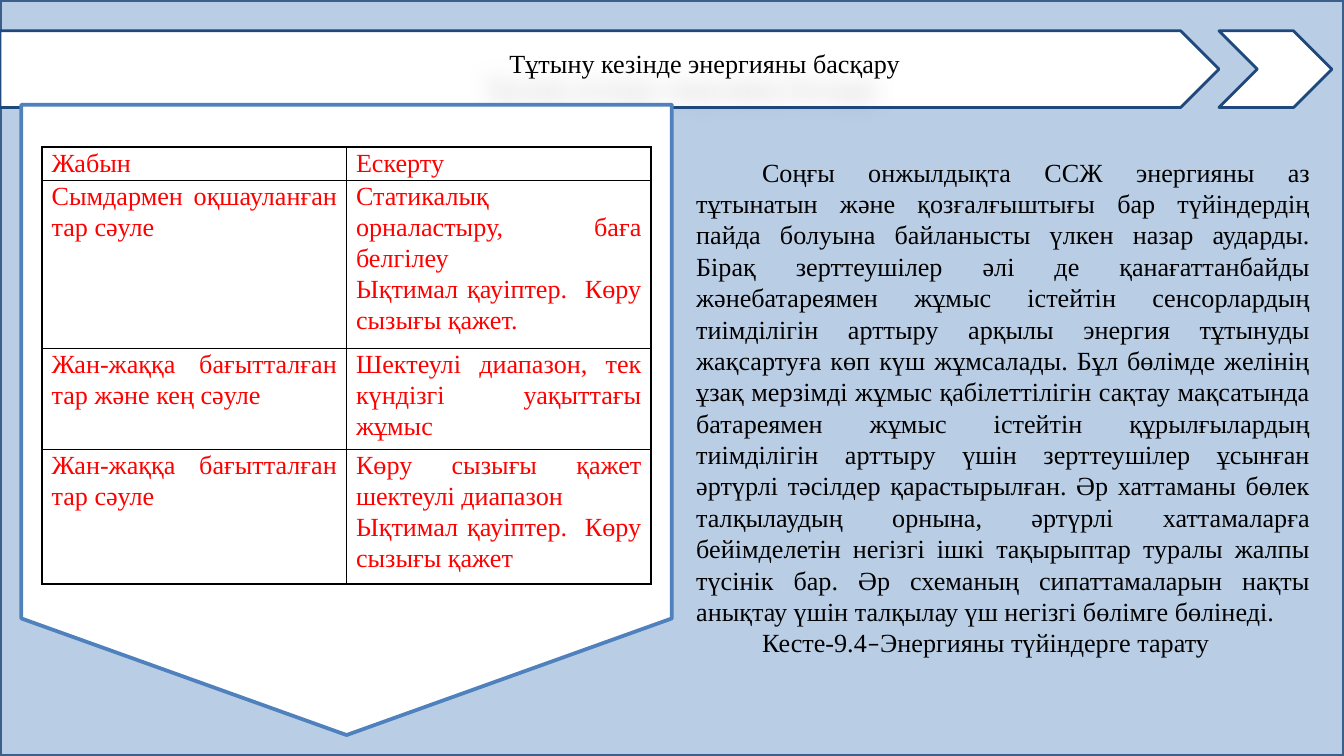
from dataclasses import dataclass
from typing import Optional

from lxml import etree
from pptx import Presentation
from pptx import util as u
from pptx.dml.color import RGBColor
from pptx.enum import shapes, text
from pptx.oxml import parse_xml
from pptx.oxml.ns import nsdecls, qn

# Grid of the slide: 100 columns by 56.25 rows
COLUMNS, ROWS = 100, 56.25
presentation = Presentation()
presentation.slide_width = u.Inches(10)
presentation.slide_height = u.Emu(presentation.slide_width * 9 // 16)
COLUMN = presentation.slide_width / COLUMNS
ROW = presentation.slide_height / ROWS
FONT = "Times New Roman"
BLACK, RED, WHITE = "000000", "FF0000", "FFFFFF"
JUSTIFY = text.PP_ALIGN.JUSTIFY


@dataclass
class Box:
    left: float
    top: float
    width: float
    height: float

    def place(self) -> dict:
        return {
            "left": u.Emu(round(self.left * COLUMN)),
            "top": u.Emu(round(self.top * ROW)),
            "width": u.Emu(round(self.width * COLUMN)),
            "height": u.Emu(round(self.height * ROW)),
        }


@dataclass
class Panel:
    kind: shapes.MSO_SHAPE
    box: Box
    fill: str
    line: str
    line_width: float
    rotation: float = 0
    adjustment: Optional[float] = None


def colour(value: str) -> RGBColor:
    return RGBColor.from_string(value)


def apply(target, values: dict) -> None:
    for name, value in values.items():
        setattr(target, name, value)


def draw_panel(slide, panel: Panel) -> None:
    shape = slide.shapes.add_shape(panel.kind, **panel.box.place())
    shape.shadow.inherit = False
    shape.rotation = panel.rotation
    if panel.adjustment is not None:
        shape.adjustments[0] = panel.adjustment
    shape.fill.solid()
    shape.fill.fore_color.rgb = colour(panel.fill)
    shape.line.color.rgb = colour(panel.line)
    shape.line.width = u.Pt(panel.line_width)


def write(paragraph, runs: list, ink: str, settings: dict) -> None:
    """Fill a paragraph with (words, font name) runs."""
    apply(paragraph, settings)
    for words, font_name in runs:
        run = paragraph.add_run()
        run.text = words
        apply(run.font, {"name": font_name, "size": u.Pt(14), "bold": False})
        run.font.color.rgb = colour(ink)


def indent_first_line(paragraph) -> None:
    properties = paragraph._p.get_or_add_pPr()
    properties.set("marL", "0")
    properties.set("indent", str(u.Inches(0.49)))
    etree.SubElement(properties, qn("a:buNone"))


def fill_placeholder(slide, shape, box: Box, frame_settings: dict,
                     paragraphs: list, alignment) -> None:
    apply(shape, box.place())
    frame = shape.text_frame
    apply(frame, {"word_wrap": True, "auto_size": text.MSO_AUTO_SIZE.SHAPE_TO_FIT_TEXT})
    apply(frame, frame_settings)
    for index, runs in enumerate(paragraphs):
        paragraph = frame.add_paragraph() if index else frame.paragraphs[0]
        indent_first_line(paragraph)
        write(paragraph, runs, BLACK, {"alignment": alignment, "space_before": u.Pt(0)})
    slide.shapes._spTree.append(shape._element)  # bring to front


def add_soft_shadow(shape) -> None:
    shape._element.spPr.append(parse_xml(
        f'<a:effectLst {nsdecls("a")}><a:outerShdw blurRad="150000" dist="240000" '
        'dir="8100000" rotWithShape="0"><a:srgbClr val="000000">'
        '<a:alpha val="28000"/></a:srgbClr></a:outerShdw></a:effectLst>'))


def draw_borders(cell) -> None:
    properties = cell._tc.get_or_add_tcPr()
    for side in ("lnL", "lnR", "lnT", "lnB"):
        properties.append(parse_xml(
            f'<a:{side} {nsdecls("a")} w="{u.Pt(1)}"><a:solidFill>'
            f'<a:srgbClr val="{BLACK}"/></a:solidFill></a:{side}>'))


def draw_table(slide, box: Box, row_heights: list, rows: list) -> None:
    table = slide.shapes.add_table(len(rows), len(rows[0]), **box.place()).table
    apply(table, {"first_row": False, "horz_banding": False})
    for row, height, entries in zip(table.rows, row_heights, rows):
        row.height = u.Emu(round(height * ROW))
        for cell, lines in zip(row.cells, entries):
            apply(cell, {"margin_left": u.Inches(0.07), "margin_right": u.Inches(0.07),
                         "margin_top": 0, "margin_bottom": 0})
            for index, line in enumerate(lines):
                frame = cell.text_frame
                paragraph = frame.add_paragraph() if index else frame.paragraphs[0]
                write(paragraph, [(line, FONT)], RED,
                      {"alignment": JUSTIFY, "line_spacing": 1.07})
            draw_borders(cell)
            cell.fill.background()


# Content
BACKDROP = Panel(shapes.MSO_SHAPE.RECTANGLE, Box(0, 0, COLUMNS, ROWS), "B9CDE5", "3A5F8C", 2)
BANNER = Panel(shapes.MSO_SHAPE.PENTAGON, Box(0, 2.3, 90.7, 5.7), WHITE, "1F497D", 1.5)
ARROW = Panel(shapes.MSO_SHAPE.CHEVRON, Box(90.7, 2.3, 8.4, 5.7), WHITE, "1F497D", 1.5)
TABLE_CARD = Panel(shapes.MSO_SHAPE.PENTAGON, Box(2.34, 7.04, 46.9, 48.4), WHITE, "4F81BD", 2,
                   rotation=90, adjustment=0.185)

TITLE = [[("Тұтыну кезінде энергияны басқару", FONT)]]
BODY = [
    [("Соңғы онжылдықта ССЖ энергияны аз тұтынатын және қозғалғыштығы бар түйіндердің "
      "пайда болуына байланысты үлкен назар аударды. Бірақ зерттеушілер әлі де "
      "қанағаттанбайды жәнебатареямен жұмыс істейтін сенсорлардың тиімділігін арттыру "
      "арқылы энергия тұтынуды жақсартуға көп күш жұмсалады. Бұл бөлімде желінің ұзақ "
      "мерзімді жұмыс қабілеттілігін сақтау мақсатында батареямен жұмыс істейтін "
      "құрылғылардың тиімділігін арттыру үшін зерттеушілер ұсынған әртүрлі тәсілдер "
      "қарастырылған. Әр хаттаманы бөлек талқылаудың орнына, әртүрлі хаттамаларға "
      "бейімделетін негізгі ішкі тақырыптар туралы жалпы түсінік бар. Әр схеманың "
      "сипаттамаларын нақты анықтау үшін талқылау үш негізгі бөлімге бөлінеді.", FONT)],
    [("Кесте-9.4", FONT), ("–", "Calibri"), ("Энергияны түйіндерге тарату", FONT)],
]
TABLE_ROWS = [
    [["Жабын"], ["Ескерту"]],
    [["Сымдармен оқшауланған тар сәуле"],
     ["Статикалық орналастыру, баға белгілеу", "Ықтимал қауіптер.  Көру сызығы қажет."]],
    [["Жан-жаққа бағытталған тар және кең сәуле"],
     ["Шектеулі диапазон, тек күндізгі уақыттағы жұмыс"]],
    [["Жан-жаққа бағытталған тар сәуле"],
     ["Көру сызығы қажет шектеулі диапазон", "Ықтимал қауіптер.  Көру сызығы қажет"]],
]

# Slide, from back to front
slide = presentation.slides.add_slide(presentation.slide_layouts[1])
title, body = slide.shapes.title, slide.placeholders[1]
draw_panel(slide, BACKDROP)
draw_panel(slide, BANNER)
fill_placeholder(slide, title, Box(0, 3.1, COLUMNS, 3.1),
                 {"vertical_anchor": text.MSO_ANCHOR.TOP,
                  "margin_left": u.Inches(0.07), "margin_right": u.Inches(0.07),
                  "margin_top": u.Inches(0.04), "margin_bottom": u.Inches(0.04)},
                 TITLE, text.PP_ALIGN.CENTER)
add_soft_shadow(title)
draw_panel(slide, ARROW)
fill_placeholder(slide, body, Box(50.8, 10.94, 47.7, 38.7),
                 {"vertical_anchor": text.MSO_ANCHOR.MIDDLE}, BODY, JUSTIFY)
draw_panel(slide, TABLE_CARD)
draw_table(slide, Box(3.14, 10.94, 45.3, 32.5), [2.5, 12.5, 7.5, 10], TABLE_ROWS)

presentation.save("out.pptx")
